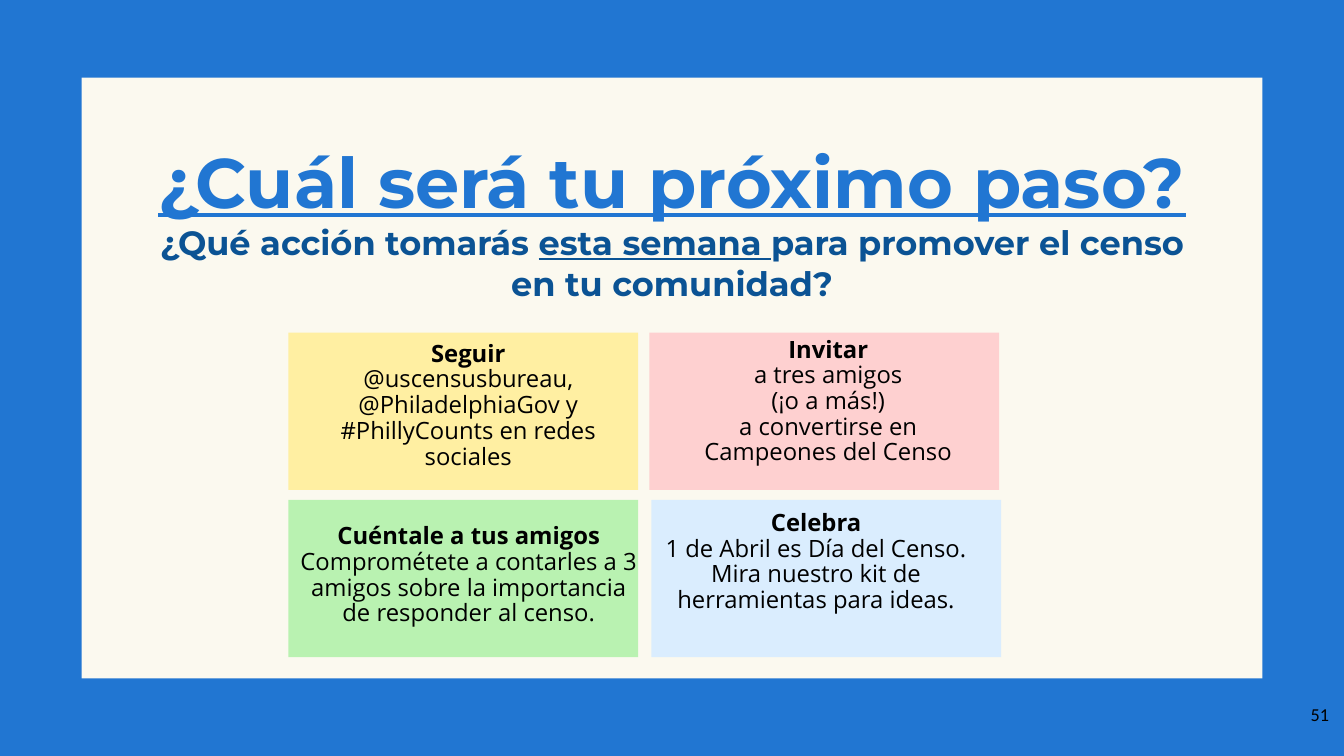
import pptx
import pptx.util
import pptx.dml.color
import pptx.enum.shapes
import pptx.enum.text

Inches = pptx.util.Inches
RGBColor = pptx.dml.color.RGBColor
PP_ALIGN = pptx.enum.text.PP_ALIGN

CREAM = RGBColor(0xFB, 0xF9, 0xEF)
BLUE = RGBColor(0x21, 0x76, 0xD2)
NAVY = RGBColor(0x0B, 0x53, 0x94)
YELLOW = RGBColor(0xFF, 0xEF, 0xA2)
PINK = RGBColor(0xFE, 0xD0, 0xD0)
GREEN = RGBColor(0xB9, 0xF2, 0xB1)
PALE_BLUE = RGBColor(0xDA, 0xED, 0xFE)
BLACK = RGBColor(0, 0, 0)

WIDTH, HEIGHT = 13.33, 7.5
SIDE, BAND = 0.81, 0.77
CARD_WIDTH, CARD_HEIGHT = 3.47, 1.56

deck = pptx.Presentation()
deck.slide_width = Inches(WIDTH)
deck.slide_height = Inches(HEIGHT)
slide = deck.slides.add_slide(deck.slide_layouts[5])
slide.background.fill.solid()
slide.background.fill.fore_color.rgb = CREAM


def add_block(left, top, width, height, color):
    block = slide.shapes.add_shape(
        pptx.enum.shapes.MSO_SHAPE.RECTANGLE,
        Inches(left), Inches(top), Inches(width), Inches(height))
    block.shadow.inherit = False
    block.fill.solid()
    block.fill.fore_color.rgb = color
    block.line.fill.background()


def add_run(paragraph, text, color, **font_values):
    run = paragraph.add_run()
    run.text = text
    run.font.color.rgb = color
    for name, value in font_values.items():
        setattr(run.font, name, value)


# Blue frame around the slide
for left, top, width, height in [
    (0, HEIGHT - BAND, WIDTH, BAND),
    (0, 0, WIDTH, BAND),
    (0, 0, SIDE, HEIGHT),
    (WIDTH - SIDE, 0, SIDE, HEIGHT),
]:
    add_block(left, top, width, height, BLUE)

# Title and question
title = slide.shapes.title
title.left, title.top = Inches(1.29), Inches(1.32)
title.width, title.height = Inches(10.75), Inches(1.11)
heading = title.text_frame
heading.word_wrap = True
heading.auto_size = pptx.enum.text.MSO_AUTO_SIZE.NONE
heading.vertical_anchor = pptx.enum.text.MSO_ANCHOR.TOP
for paragraph, runs, size, color in [
    (heading.paragraphs[0], [("¿Cuál será tu próximo paso?", True)], 50, BLUE),
    (heading.add_paragraph(), [
        ("¿Qué acción tomarás ", False),
        ("esta semana ", True),
        ("para promover el censo en tu comunidad?", False),
    ], 24, NAVY),
]:
    paragraph.alignment = PP_ALIGN.CENTER
    for text, underline in runs:
        add_run(paragraph, text, color, name="Montserrat", bold=True,
                size=pptx.util.Pt(size), underline=underline)

# Action cards: corner and colour of the card, box of its text, lines
cards = [
    (2.86, 3.3, YELLOW, (3.09, 3.34, 3.11, 1.5),
     ["Seguir",
      "@uscensusbureau, @PhiladelphiaGov y #PhillyCounts en redes sociales"]),
    (6.44, 3.3, PINK, (6.66, 3.3, 3.11, 1.5),
     ["Invitar", "a tres amigos", "(¡o a más!)",
      "a convertirse en Campeones del Censo"]),
    (2.86, 4.96, GREEN, (2.86, 5.15, 3.58, 1.3),
     ["Cuéntale a tus amigos",
      "Comprométete a contarles a 3 amigos sobre la importancia "
      "de responder al censo."]),
    (6.46, 4.96, PALE_BLUE, (6.28, 5.02, 3.63, 1.5),
     ["Celebra",
      "1 de Abril es Día del Censo. Mira nuestro kit de herramientas "
      "para ideas."]),
]
for left, top, color, text_box, lines in cards:
    add_block(left, top, CARD_WIDTH, CARD_HEIGHT, color)
    action = slide.shapes.add_textbox(*map(Inches, text_box)).text_frame
    action.word_wrap = True
    for index, line in enumerate(lines):
        paragraph = action.add_paragraph() if index else action.paragraphs[0]
        paragraph.alignment = PP_ALIGN.CENTER
        paragraph.line_spacing = 0.9
        add_run(paragraph, line, BLACK, name="Open Sans",
                size=pptx.util.Pt(17), bold=index == 0)

# Page number
page_number = slide.shapes.add_textbox(
    Inches(12.48), Inches(6.93), Inches(0.8), Inches(0.57)).text_frame
page_number.word_wrap = True
page_number.paragraphs[0].alignment = PP_ALIGN.RIGHT
add_run(page_number.paragraphs[0], "51", BLACK, name="Calibri",
        size=pptx.util.Pt(13))

deck.save("out.pptx")
